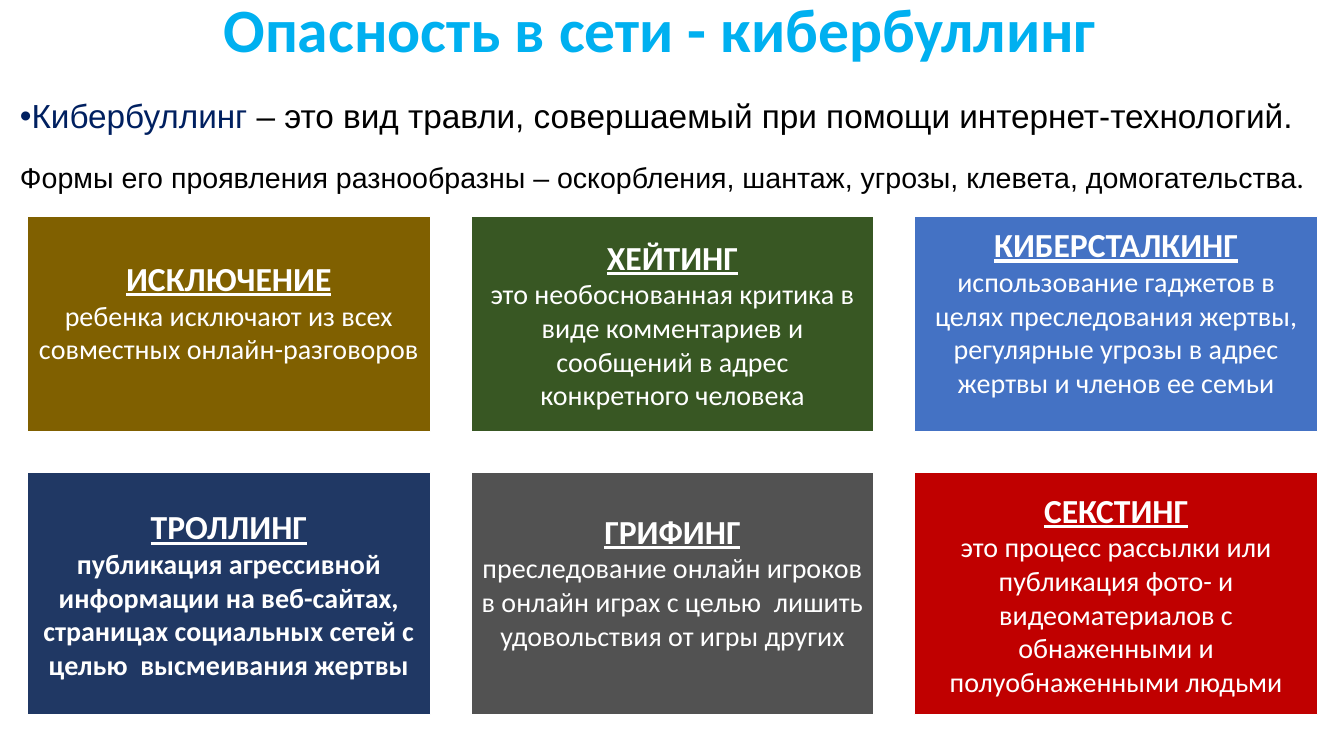
from pptx import Presentation
from pptx.util import Inches, Pt
from pptx.dml.color import RGBColor as RGB
from pptx.enum.shapes import MSO_SHAPE as Shape
from pptx.enum.text import MSO_ANCHOR as Anchor, PP_ALIGN as Align
from lxml import etree

TITLE = "Опасность в сети - кибербуллинг"
TERM = "Кибербуллинг"
MEANING = " – это вид травли, совершаемый при помощи интернет-технологий."
FORMS = "Формы его проявления разнообразны – оскорбления, шантаж, угрозы, клевета, домогательства"

CARDS = [
    [
        dict(head="ИСКЛЮЧЕНИЕ", fill="806000", lift=0.25,
             body="ребенка исключают из всех совместных онлайн-разговоров"),
        dict(head="ХЕЙТИНГ", fill="385723",
             body="это необоснованная критика в виде комментариев и сообщений в адрес конкретного человека"),
        dict(head="КИБЕРСТАЛКИНГ", fill="4472C4", lift=0.25,
             body="использование гаджетов в целях преследования жертвы, регулярные угрозы в адрес жертвы и членов ее семьи"),
    ],
    [
        dict(head="ТРОЛЛИНГ", fill="203864", bold=True, side=0.07,
             body="публикация агрессивной информации на веб-сайтах, страницах социальных сетей с целью  высмеивания жертвы"),
        dict(head="ГРИФИНГ", fill="525252", lift=0.25,
             body="преследование онлайн игроков в онлайн играх с целью  лишить удовольствия от игры других"),
        dict(head="СЕКСТИНГ", fill="C00000",
             body="это процесс рассылки или публикация фото- и видеоматериалов с обнаженными и полуобнаженными людьми"),
    ],
]

THEME = dict(
    title="00B0F0", term="002060", ink="000000", light="FFFFFF",
    head="Calibri", text="Arial",
    big=44, lead=23.8, note=20.4, name=24, body=20,
)
LEFT, STEP, WIDTH = 0.27, 4.4, 4
ROWS = [(2.15, 2.13), (4.69, 2.4)]


def write(para, text, font=THEME["head"], size=THEME["body"],
          color=THEME["light"], bold=False, line=False):
    run = para.add_run()
    run.text = text
    run.font.name = font
    run.font.size = Pt(size)
    run.font.color.rgb = RGB.from_string(color)
    run.font.bold = bold
    run.font.underline = line


def add_box(slide, left, top, width, height):
    box = slide.shapes.add_textbox(Inches(left), Inches(top), Inches(width), Inches(height))
    box.text_frame.word_wrap = True
    return box.text_frame


def add_bullet(para):
    props = para._p.get_or_add_pPr()
    props.set("marL", "0")
    props.set("indent", "0")
    space = "{http://schemas.openxmlformats.org/drawingml/2006/main}"
    etree.SubElement(props, space + "buFont").set("typeface", THEME["text"])
    etree.SubElement(props, space + "buChar").set("char", "•")


def add_card(slide, left, top, height, head, body, fill, lift=0, side=0.1, bold=False):
    card = slide.shapes.add_shape(
        Shape.RECTANGLE, Inches(left), Inches(top), Inches(WIDTH), Inches(height))
    card.shadow.inherit = False
    card.fill.solid()
    card.fill.fore_color.rgb = RGB.from_string(fill)
    card.line.color.rgb = RGB.from_string(THEME["light"])
    card.line.width = Pt(1)
    frame = card.text_frame
    frame.word_wrap = True
    frame.vertical_anchor = Anchor.MIDDLE
    frame.margin_left = frame.margin_right = Inches(side)
    frame.margin_top = 0
    frame.margin_bottom = Inches(lift)
    first, second = frame.paragraphs[0], frame.add_paragraph()
    first.alignment = second.alignment = Align.CENTER
    write(first, head, size=THEME["name"], bold=True, line=True)
    write(second, body, bold=bold)


def main():
    deck = Presentation()
    deck.slide_width, deck.slide_height = Inches(13.33), Inches(7.5)
    slide = deck.slides.add_slide(deck.slide_layouts[6])

    frame = add_box(slide, 1.95, 0.09, 9.2, 0.46)
    frame.vertical_anchor = Anchor.MIDDLE
    para = frame.paragraphs[0]
    para.alignment = Align.CENTER
    para.line_spacing = 0.9
    write(para, TITLE, size=THEME["big"], color=THEME["title"], bold=True)

    frame = add_box(slide, 0.1, 0.86, 13.23, 1.25)
    lead, note = frame.paragraphs[0], frame.add_paragraph()
    lead.line_spacing = note.line_spacing = 1.1
    note.space_before = Pt(15)
    add_bullet(lead)
    write(lead, TERM, font=THEME["text"], size=THEME["lead"], color=THEME["term"])
    write(lead, MEANING, font=THEME["text"], size=THEME["lead"], color=THEME["ink"])
    write(note, FORMS, font=THEME["text"], size=THEME["note"], color=THEME["ink"])
    write(note, ".", size=THEME["note"], color=THEME["ink"])

    for (top, height), row in zip(ROWS, CARDS):
        for col, card in enumerate(row):
            add_card(slide, LEFT + col * STEP, top, height, **card)

    deck.save("out.pptx")


if __name__ == "__main__":
    main()
